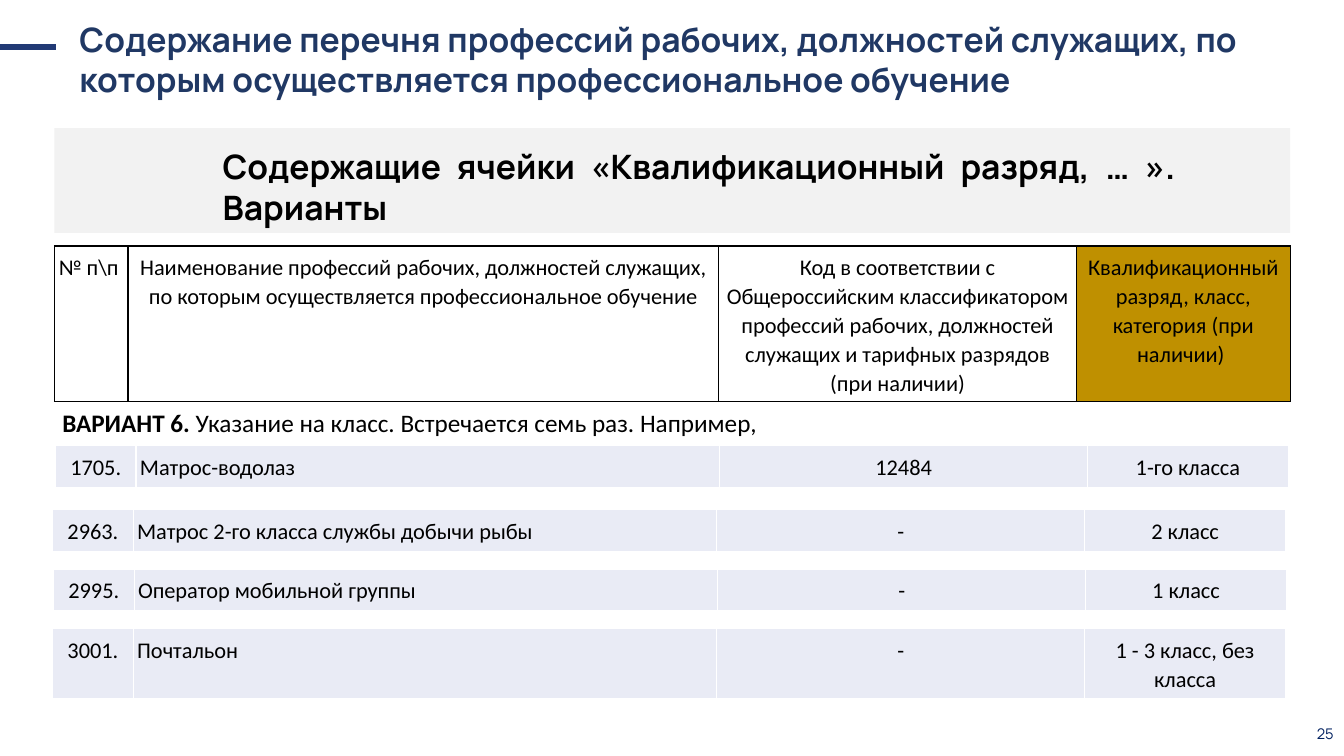
import pptx
import pptx.util
import pptx.dml.color
import pptx.enum.shapes
import pptx.enum.text
import pptx.oxml
import pptx.oxml.ns
from dataclasses import dataclass

Pt = pptx.util.Pt
ALIGN = pptx.enum.text.PP_ALIGN
ANCHOR = pptx.enum.text.MSO_ANCHOR


@dataclass(frozen=True)
class Theme:
    heading: str = "Manrope"
    body: str = "Calibri"
    title: str = "203864"
    accent: str = "213A75"
    number: str = "002060"
    text: str = "000000"
    white: str = "FFFFFF"
    band: str = "F2F2F2"
    row: str = "E9EBF5"
    gold: str = "BF9000"
    heading_size: float = 24
    variant_size: float = 18
    table_size: float = 16
    number_size: float = 10.5


T = Theme()


def rgb(color):
    return pptx.dml.color.RGBColor.from_string(color)


def add_run(p, text, font, size, color, bold=False):
    r = p.add_run()
    r.text = text
    r.font.name = font
    r.font.size = Pt(size)
    r.font.color.rgb = rgb(color)
    r.font.bold = bold


def add_text(s, box, runs, align=ALIGN.LEFT, anchor=ANCHOR.TOP, spacing=None, after=None):
    tf = s.shapes.add_textbox(*map(Pt, box)).text_frame
    tf.word_wrap = True
    tf.vertical_anchor = anchor
    p = tf.paragraphs[0]
    p.alignment = align
    if spacing:
        p.line_spacing = spacing
    if after:
        p.space_after = Pt(after)
    for run in runs:
        add_run(p, *run)


def add_band(s, box, color):
    sp = s.shapes.add_shape(pptx.enum.shapes.MSO_SHAPE.RECTANGLE, *map(Pt, box))
    sp.shadow.inherit = False
    sp.fill.solid()
    sp.fill.fore_color.rgb = rgb(color)
    sp.line.fill.background()


def add_line(s, x1, y1, x2, y2, color, width):
    kind = pptx.enum.shapes.MSO_CONNECTOR.STRAIGHT
    line = s.shapes.add_connector(kind, Pt(x1), Pt(y1), Pt(x2), Pt(y2))
    line.line.color.rgb = rgb(color)
    line.line.width = Pt(width)
    pptx.oxml.ns.qn("a:effectLst")
    line._element.spPr.append(pptx.oxml.parse_xml(
        f'<a:effectLst {pptx.oxml.ns.nsdecls("a")}/>'))


def set_borders(cell, color):
    tcPr = cell._tc.get_or_add_tcPr()
    for side in "LRTB":
        tcPr.append(pptx.oxml.parse_xml(
            f'<a:ln{side} {pptx.oxml.ns.nsdecls("a")} w="{Pt(1)}">'
            f'<a:solidFill><a:srgbClr val="{color}"/></a:solidFill></a:ln{side}>'))


def add_row_table(s, x, y, height, widths, texts, fills, border, aligns):
    """Add a one-row table; a fill of None leaves the cell clear."""
    frame = s.shapes.add_table(1, len(widths), Pt(x), Pt(y), Pt(sum(widths)), Pt(height))
    table = frame.table
    table.first_row = table.horz_banding = False
    for i, (width, text, fill, align) in enumerate(zip(widths, texts, fills, aligns)):
        table.columns[i].width = Pt(width)
        cell = table.cell(0, i)
        cell.margin_left = cell.margin_right = Pt(2.8)
        cell.margin_top = cell.margin_bottom = Pt(4.8)
        set_borders(cell, border)
        if fill:
            cell.fill.solid()
            cell.fill.fore_color.rgb = rgb(fill)
        else:
            cell.fill.background()
        p = cell.text_frame.paragraphs[0]
        p.alignment = align
        p.line_spacing = 1.06
        p.space_after = Pt(8)
        add_run(p, text, T.body, T.table_size, T.text)


def main():
    prs = pptx.Presentation()
    prs.slide_width, prs.slide_height = Pt(960), Pt(540)
    s = prs.slides.add_slide(prs.slide_layouts[6])

    # Subtitle band
    add_band(s, (38.9, 91.6, 882.7, 74.7), T.band)
    add_text(s, (151.9, 100.8, 694.8, 65.5),
             [("Содержащие ячейки «Квалификационный разряд, … ». Варианты",
               T.heading, T.heading_size, T.text, True)], ALIGN.JUSTIFY)

    # Title, page number and accent line
    add_text(s, (49.7, 10, 871.9, 65.5),
             [("Содержание перечня профессий рабочих, должностей служащих, "
               "по которым осуществляется профессиональное обучение",
               T.heading, T.heading_size, T.title, True)])
    add_text(s, (922.3, 509.8, 37.4, 28.8),
             [("25", T.heading, T.number_size, T.number)], ALIGN.RIGHT, ANCHOR.MIDDLE)
    add_line(s, 0, 33.8, 40.3, 33.8, T.accent, 4.5)

    # Column headings
    add_row_table(
        s, 38.9, 175.7, 111, (52.6, 421.9, 255.6, 152.6),
        ("№ п\\п ",
         "Наименование профессий рабочих, должностей служащих, "
         "по которым осуществляется профессиональное обучение",
         "Код в соответствии с Общероссийским классификатором профессий рабочих, "
         "должностей служащих и тарифных разрядов (при наличии)",
         "Квалификационный разряд, класс, категория (при наличии) "),
        (None, None, None, T.gold), T.text, [ALIGN.CENTER] * 4)

    # Variant description
    add_text(s, (37.4, 276.5, 882, 74.2),
             [("ВАРИАНТ 6.", T.body, T.variant_size, T.text, True),
              (" Указание на класс. Встречается семь раз. Например,",
               T.body, T.variant_size, T.text)],
             ALIGN.JUSTIFY, spacing=1.5, after=8)

    # Examples
    examples = [
        (39.6, 318.5, 29.5, ("1705.", "Матрос-водолаз", "12484", "1-го класса")),
        (37.6, 364, 29.5, ("2963.", "Матрос 2-го класса службы добычи рыбы", "-", "2 класс")),
        (38.2, 406.4, 29.5, ("2995.", "Оператор мобильной группы", "-", "1 класс")),
        (37.6, 448.8, 50, ("3001.", "Почтальон", "-", "1 - 3 класс, без класса")),
    ]
    aligns = (ALIGN.CENTER, ALIGN.LEFT, ALIGN.CENTER, ALIGN.CENTER)
    for x, y, height, texts in examples:
        add_row_table(s, x, y, height, (57.6, 416.9, 262.8, 143.3),
                      texts, [T.row] * 4, T.white, aligns)

    prs.save("out.pptx")


if __name__ == "__main__":
    main()
